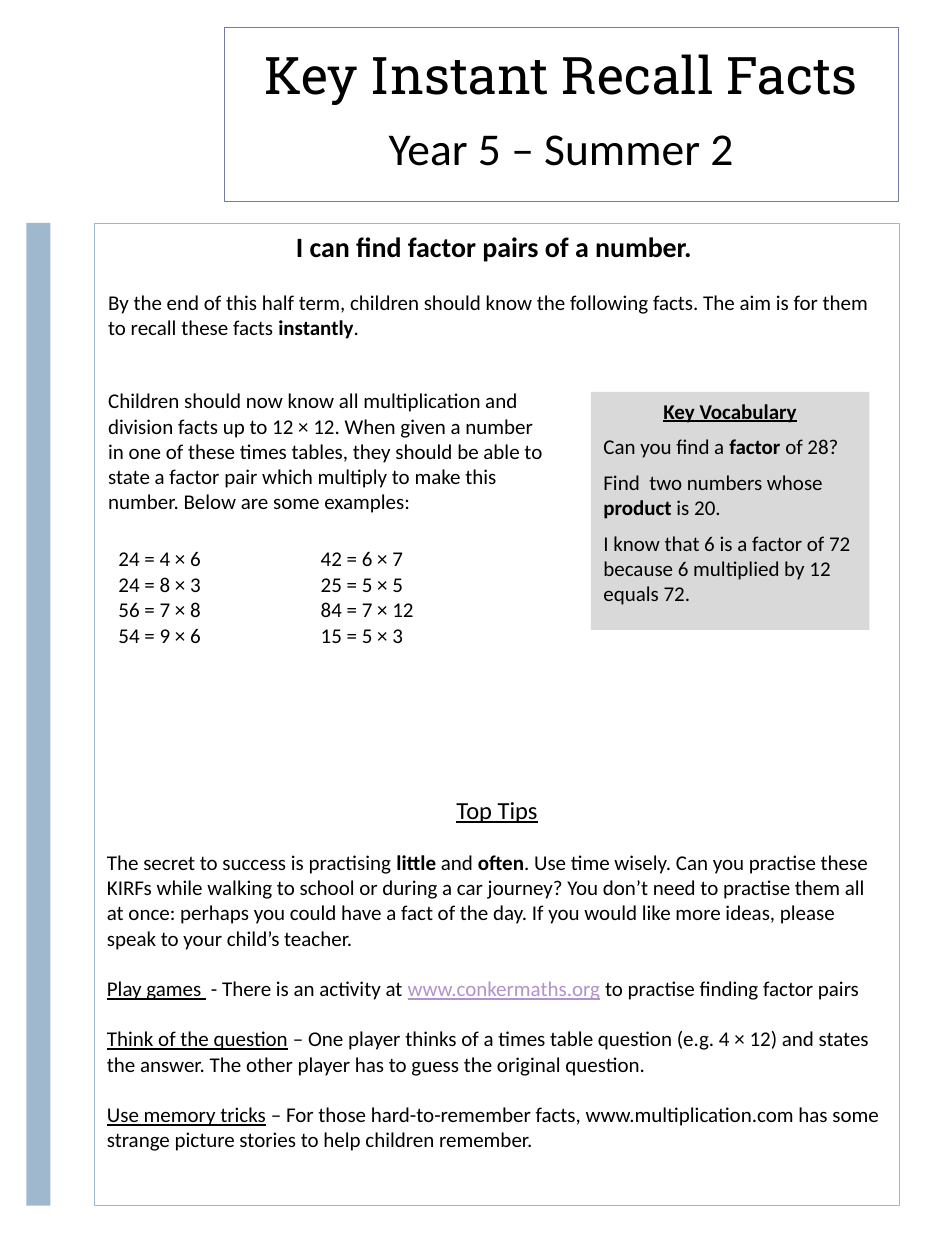
import dataclasses
import typing

import pptx
import pptx.dml.color
import pptx.enum.shapes
import pptx.enum.text
import pptx.oxml
import pptx.oxml.ns
import pptx.util

Align = pptx.enum.text.PP_ALIGN
Anchor = pptx.enum.text.MSO_ANCHOR
COLS, ROWS = 75, 100


@dataclasses.dataclass(frozen=True)
class Theme:
    ink: str = "000000"
    paper: str = "FFFFFF"
    slate: str = "727CA3"
    sky: str = "9FB8CD"
    grey: str = "D9D9D9"
    link: str = "B292CA"
    body: str = "Calibri"
    slab: str = "Roboto Slab"
    title: float = 29.6
    term: float = 26
    head: float = 16
    tips: float = 14
    text: float = 12
    gap: float = 14.4
    step: float = 6


T = Theme()


class Area(typing.NamedTuple):
    col: float
    row: float
    wide: float
    high: float


class Run(typing.NamedTuple):
    text: str
    form: dict = {}


class Para(typing.NamedTuple):
    runs: list
    size: float = T.text
    align: Align = Align.LEFT
    space: float = 0
    face: str = T.body


class Panel(typing.NamedTuple):
    area: Area
    fill: str = ""
    line: str = ""


class Block(typing.NamedTuple):
    area: Area
    paras: list
    anchor: Anchor = Anchor.TOP


deck = pptx.Presentation()
deck.slide_width = pptx.util.Inches(7.5)
deck.slide_height = pptx.util.Inches(10)
slide = deck.slides.add_slide(deck.slide_layouts[6])


def place(area: Area) -> list:
    wide, high = deck.slide_width / COLS, deck.slide_height / ROWS
    return [round(n * unit) for n, unit in zip(area, (wide, high, wide, high))]


def tint(code: str) -> pptx.dml.color.RGBColor:
    return pptx.dml.color.RGBColor.from_string(code)


def write(frame: typing.Any, paras: list) -> None:
    for i, para in enumerate(paras):
        line = frame.add_paragraph() if i else frame.paragraphs[0]
        line.alignment = para.align
        line.space_before = pptx.util.Pt(para.space if i else 0)
        for text, form in para.runs:
            run = line.add_run()
            run.text = text
            look = {"name": para.face, "size": pptx.util.Pt(para.size)} | form
            run.font.color.rgb = tint(look.pop("color", T.ink))
            for key, value in look.items():
                setattr(run.font, key, value)


def draw(panel: Panel) -> None:
    kind = pptx.enum.shapes.MSO_SHAPE.RECTANGLE
    shape = slide.shapes.add_shape(kind, *place(panel.area))
    shape.shadow.inherit = False
    for paint, code in ((shape.fill, panel.fill), (shape.line.fill, panel.line)):
        if code:
            paint.solid()
            paint.fore_color.rgb = tint(code)
        else:
            paint.background()
    if panel.line:
        shape.line.width = pptx.util.Pt(0.5)


def label(block: Block) -> None:
    frame = slide.shapes.add_textbox(*place(block.area)).text_frame
    frame.word_wrap = True
    frame.vertical_anchor = block.anchor
    write(frame, block.paras)


def edge(cell: typing.Any) -> None:
    space = pptx.oxml.ns.nsdecls("a")
    props = cell._tc.get_or_add_tcPr()
    for i, (side, width) in enumerate((("L", 1), ("R", 1), ("T", 1), ("B", 3))):
        props.insert(i, pptx.oxml.parse_xml(
            f'<a:ln{side} {space} w="{pptx.util.Pt(width)}"><a:solidFill>'
            f'<a:srgbClr val="{T.paper}"/></a:solidFill></a:ln{side}>'))


def grid(area: Area, lists: list) -> None:
    table = slide.shapes.add_table(1, len(lists), *place(area)).table
    table.first_row = table.horz_banding = False
    for cell, facts in zip(table.rows[0].cells, lists):
        cell.fill.solid()
        cell.fill.fore_color.rgb = tint(T.paper)
        edge(cell)
        write(cell.text_frame, [Para([Run(fact)]) for fact in facts])


BOLD = {"bold": True}
UNDER = {"underline": True}
MID = Align.CENTER
vocab = Area(46.9, 31.1, 22.1, 18.9)

PANELS = [
    Panel(Area(17.8, 2.2, 53.5, 13.8), line=T.slate),
    Panel(Area(7.5, 17.7, 63.9, 78), line=T.sky),
    Panel(Area(2.1, 17.7, 1.9, 78), fill=T.sky),
    Panel(vocab, fill=T.grey),
]

BLOCKS = [
    Block(Area(17.8, 2.9, 53.5, 5.9), [
        Para([Run("Key Instant Recall Facts")], T.title, MID, face=T.slab),
    ], Anchor.MIDDLE),
    Block(Area(17.8, 9, 53.5, 6.9), [
        Para([Run("Year 5 – Summer 2")], T.term, MID),
    ]),
    Block(Area(7.5, 17.7, 63.9, 5.5), [
        Para([Run("I can find factor pairs of a number. ", BOLD)], T.head, MID),
    ]),
    Block(Area(7.6, 22.5, 63.9, 8.1), [
        Para([Run("By the end of this half term, children should know the following "
                  "facts. The aim is for them to recall these facts "),
              Run("instantly", BOLD), Run(".")]),
    ]),
    Block(Area(7.6, 30.3, 37.1, 15), [
        Para([Run("Children should now know all multiplication and division facts up "
                  "to 12 × 12. When given a number in one of these times tables, they "
                  "should be able to state a factor pair which multiply to make this "
                  "number. Below are some examples:")]),
    ]),
    Block(vocab, [
        Para([Run("Key Vocabulary", BOLD | UNDER)], align=MID),
        Para([Run("Can you find a "), Run("factor", BOLD), Run(" of 28?")],
             space=T.step),
        Para([Run("Find  two numbers whose"), Run(" product", BOLD),
              Run(" is 20.")], space=T.step),
        Para([Run("I know that 6 is a factor of 72 because 6 multiplied by 12 "
                  "equals 72.")], space=T.step),
    ]),
    Block(Area(7.5, 62.6, 63.9, 33.1), [
        Para([Run("Top Tips", UNDER)], T.tips, MID),
        Para([Run("The secret to success is practising "), Run("little", BOLD),
              Run(" and "), Run("often", BOLD),
              Run(". Use time wisely. Can you practise these KIRFs while walking to "
                  "school or during a car journey? You don’t need to practise them "
                  "all at once: perhaps you could have a fact of the day. If you "
                  "would like more ideas, please speak to your child’s teacher.")],
             space=T.gap),
        Para([Run("Play games ", UNDER), Run(" - There is an activity at "),
              Run("www.conkermaths.org", UNDER | {"color": T.link}),
              Run(" to practise finding factor pairs")], space=T.gap),
        Para([Run("Think of the question", UNDER),
              Run(" – One player thinks of a times table question (e.g. 4 × 12) and "
                  "states the answer. The other player has to guess the original "
                  "question.")], space=T.gap),
        Para([Run("Use memory tricks", UNDER),
              Run(" – For those hard-to-remember facts, www.multiplication.com has "
                  "some strange picture stories to help children remember.")],
             space=T.gap),
    ]),
]

FACTS = [
    ["24 = 4 × 6", "24 = 8 × 3", "56 = 7 × 8", "54 = 9 × 6"],
    ["42 = 6 × 7", "25 = 5 × 5", "84 = 7 × 12", "15 = 5 × 3"],
]

for panel in PANELS:
    draw(panel)
for block in BLOCKS:
    label(block)
grid(Area(8.4, 42.9, 32.1, 10.2), FACTS)
deck.save("out.pptx")
